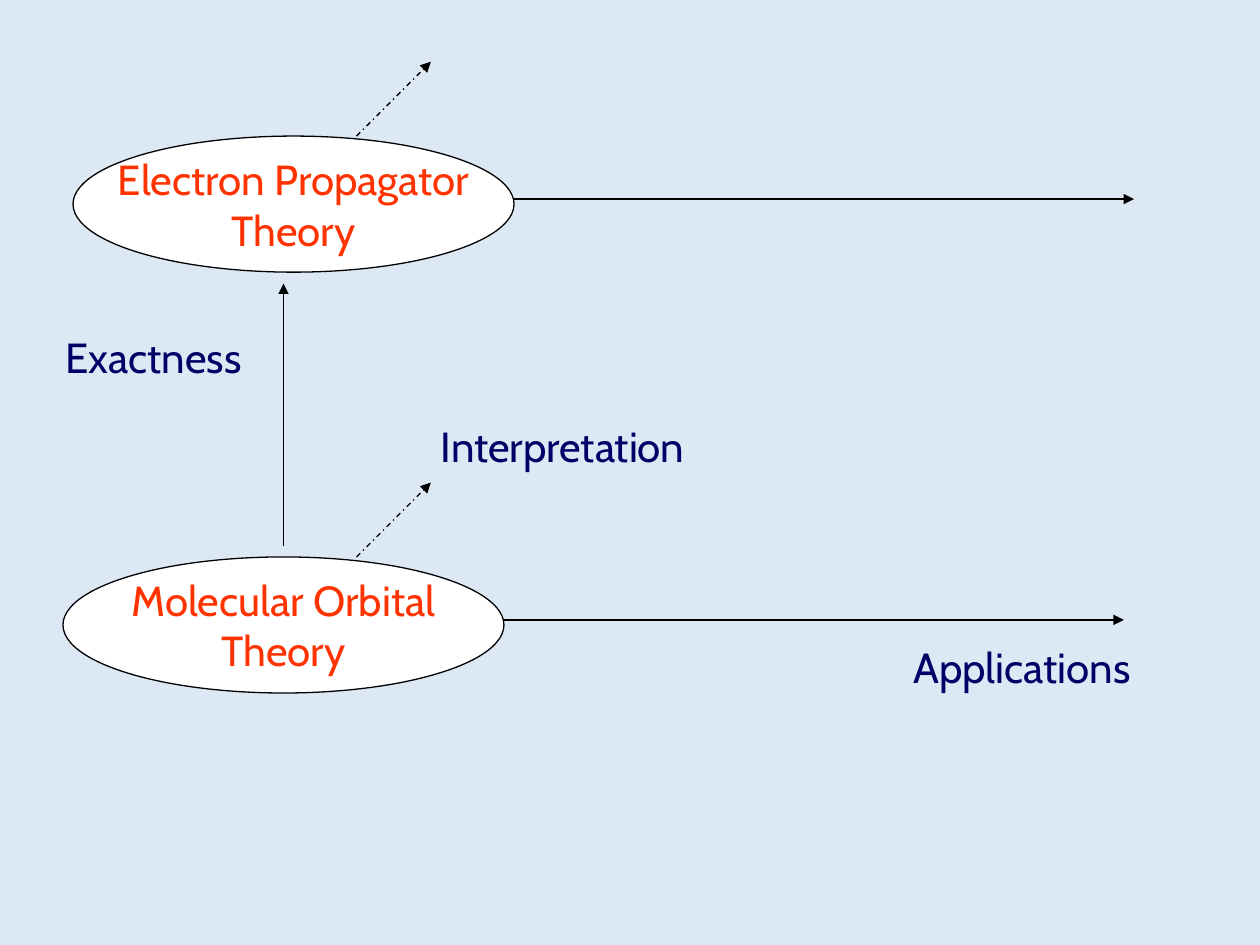
from dataclasses import dataclass

from lxml.etree import SubElement
from pptx import Presentation
from pptx.dml.color import RGBColor
from pptx.enum.dml import MSO_LINE
from pptx.enum.shapes import MSO_CONNECTOR, MSO_SHAPE
from pptx.enum.text import MSO_ANCHOR, MSO_AUTO_SIZE, PP_ALIGN
from pptx.oxml.ns import qn
from pptx.util import Inches, Pt


@dataclass(frozen=True)
class Theme:
    """Colours, font and sizes shared by the whole slide."""

    background: RGBColor = RGBColor(0xDC, 0xE8, 0xF4)
    node_fill: RGBColor = RGBColor(0xFF, 0xFF, 0xFF)
    line: RGBColor = RGBColor(0x00, 0x00, 0x00)
    node_text: RGBColor = RGBColor(0xFF, 0x33, 0x00)
    label_text: RGBColor = RGBColor(0x00, 0x00, 0x66)
    font: str = "Cabin"
    text_size: Pt = Pt(24)
    line_width: Pt = Pt(0.75)


THEME = Theme()
NODE_WIDTH = 3.5
NODE_HEIGHT = 1.08
LABEL_HEIGHT = 0.5
APPLICATION_LENGTH = 4.92
INTERPRETATION_START = 2.83
INTERPRETATION_STEP = 0.59


def write_text(text_frame, text, color, alignment):
    """Fill a text frame and format all its runs."""
    text_frame.text = text
    text_frame.word_wrap = False
    for paragraph in text_frame.paragraphs:
        paragraph.alignment = alignment
        for run in paragraph.runs:
            run.font.name = THEME.font
            run.font.size = THEME.text_size
            run.font.color.rgb = color


def style_line(line):
    """Apply the theme's line colour and width."""
    line.color.rgb = THEME.line
    line.width = THEME.line_width


def add_theory(slide, text, left, top):
    """Add an ellipse naming a theory."""
    shape = slide.shapes.add_shape(
        MSO_SHAPE.OVAL, Inches(left), Inches(top), Inches(NODE_WIDTH), Inches(NODE_HEIGHT)
    )
    shape.shadow.inherit = False
    shape.fill.solid()
    shape.fill.fore_color.rgb = THEME.node_fill
    style_line(shape.line)
    shape.text_frame.vertical_anchor = MSO_ANCHOR.MIDDLE
    write_text(shape.text_frame, text, THEME.node_text, PP_ALIGN.CENTER)


def add_arrow(slide, start, end, dash=None):
    """Add a straight arrow between two points."""
    connector = slide.shapes.add_connector(
        MSO_CONNECTOR.STRAIGHT, *(Inches(value) for value in (*start, *end))
    )
    style_line(connector.line)
    if dash is not None:
        connector.line.dash_style = dash
    properties = connector._element.spPr
    SubElement(properties.find(qn("a:ln")), qn("a:tailEnd"), type="triangle")
    SubElement(properties, qn("a:effectLst"))


def add_label(slide, text, left, top, width):
    """Add the name of an axis."""
    box = slide.shapes.add_textbox(
        Inches(left), Inches(top), Inches(width), Inches(LABEL_HEIGHT)
    )
    write_text(box.text_frame, text, THEME.label_text, PP_ALIGN.LEFT)
    box.text_frame.auto_size = MSO_AUTO_SIZE.SHAPE_TO_FIT_TEXT


def add_theory_axes(slide, text, left, top):
    """Add a theory with its application and interpretation arrows."""
    add_theory(slide, text, left, top)
    right, axis = left + NODE_WIDTH, top + 0.5
    add_arrow(slide, (right, axis), (right + APPLICATION_LENGTH, axis))
    add_arrow(
        slide,
        (INTERPRETATION_START, top),
        (INTERPRETATION_START + INTERPRETATION_STEP, top - INTERPRETATION_STEP),
        MSO_LINE.DASH_DOT,
    )


def main():
    """Build and save the slide."""
    presentation = Presentation()
    presentation.slide_width = Inches(10)
    presentation.slide_height = Inches(7.5)
    slide = presentation.slides.add_slide(presentation.slide_layouts.get_by_name("Blank"))
    slide.background.fill.solid()
    slide.background.fill.fore_color.rgb = THEME.background

    add_theory_axes(slide, "Electron Propagator\nTheory", 0.58, 1.08)
    add_theory_axes(slide, "Molecular Orbital\nTheory", 0.5, 4.42)
    add_arrow(slide, (2.25, 4.33), (2.25, 2.25))

    add_label(slide, "Applications", 7.15, 5.04, 1.95)
    add_label(slide, "Interpretation", 3.4, 3.29, 2.24)
    add_label(slide, "Exactness", 0.42, 2.58, 1.65)
    presentation.save("out.pptx")


if __name__ == "__main__":
    main()
